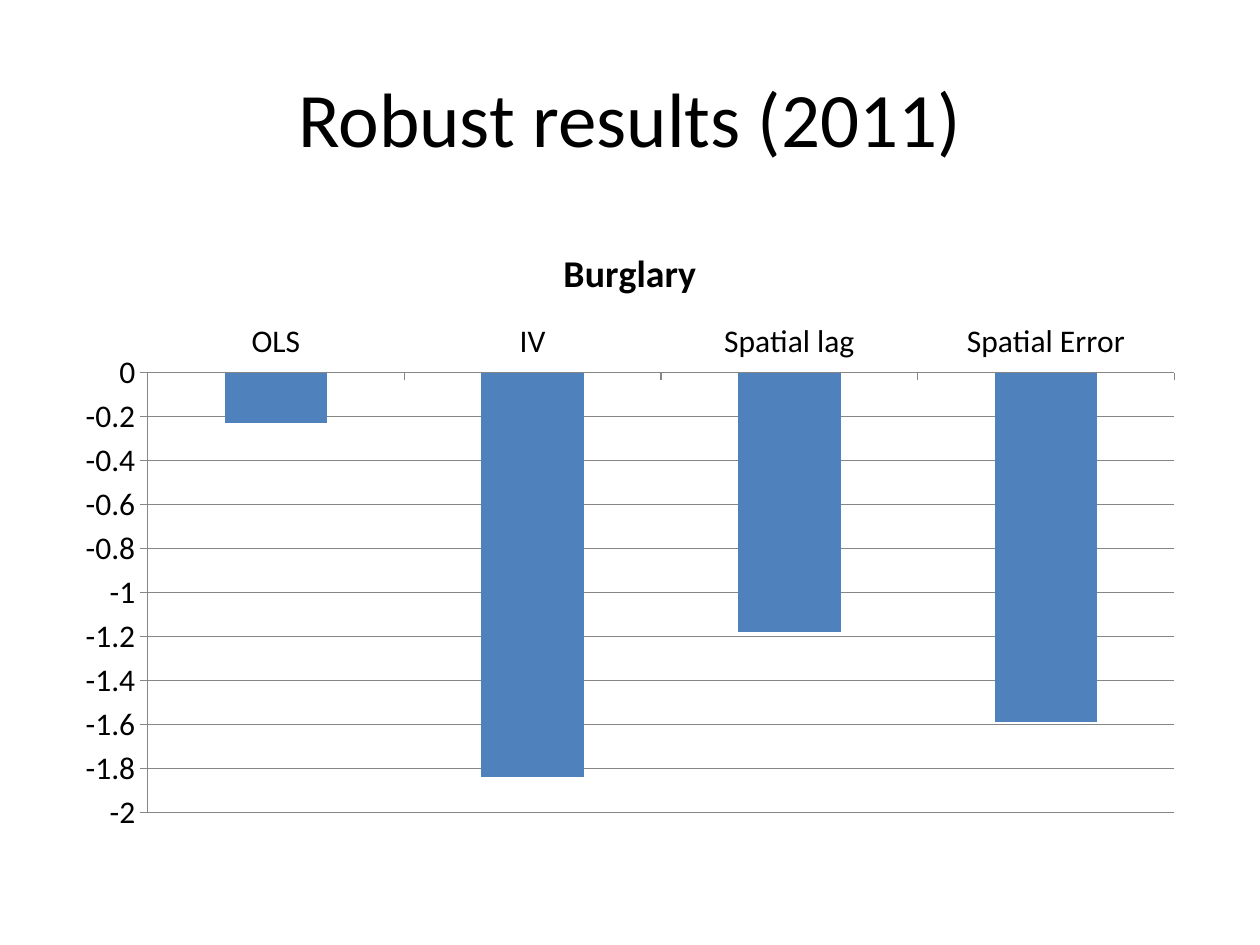
from dataclasses import dataclass

from pptx import Presentation
from pptx.chart.data import CategoryChartData
from pptx.dml.color import RGBColor
from pptx.enum.chart import XL_CHART_TYPE, XL_TICK_LABEL_POSITION, XL_TICK_MARK
from pptx.enum.text import MSO_ANCHOR, PP_ALIGN
from pptx.util import Inches, Pt


@dataclass(frozen=True)
class Theme:
    """Colours, font and type sizes of the slide."""
    font: str = "Calibri"
    text: RGBColor = RGBColor(0x00, 0x00, 0x00)
    bar: RGBColor = RGBColor(0x4F, 0x81, 0xBD)
    rule: RGBColor = RGBColor(0x86, 0x86, 0x86)
    heading_size: float = 44
    chart_title_size: float = 21.6
    label_size: float = 18
    rule_width: float = 0.75


THEME = Theme()
ESTIMATES = {"OLS": -0.23, "IV": -1.84, "Spatial lag": -1.18, "Spatial Error": -1.59}


def style_font(font, size, bold=False):
    """Apply the theme's typeface and colour at a given size."""
    font.name = THEME.font
    font.size = Pt(size)
    font.bold = bold
    font.color.rgb = THEME.text


def write_text(frame, text, *, size, bold=False, align=PP_ALIGN.CENTER):
    """Fill a text frame with one formatted paragraph."""
    paragraph = frame.paragraphs[0]
    paragraph.alignment = align
    run = paragraph.add_run()
    run.text = text
    style_font(run.font, size, bold)


def style_rule(line):
    """Draw an axis or gridline as a thin grey rule."""
    line.color.rgb = THEME.rule
    line.width = Pt(THEME.rule_width)


def place_heading(slide, text):
    """Position the title placeholder and write the heading."""
    heading = slide.shapes.title
    heading.left, heading.top = Inches(0.5), Inches(0.3)
    heading.width, heading.height = Inches(9), Inches(1.25)
    heading.text_frame.vertical_anchor = MSO_ANCHOR.MIDDLE
    write_text(heading.text_frame, text, size=THEME.heading_size)


def style_axes(chart):
    """Set the scale, ticks, labels and rules of both axes."""
    methods, effects = chart.category_axis, chart.value_axis
    for axis in (methods, effects):
        axis.major_tick_mark = XL_TICK_MARK.OUTSIDE
        axis.minor_tick_mark = XL_TICK_MARK.NONE
        style_font(axis.tick_labels.font, THEME.label_size)
        style_rule(axis.format.line)
    methods.tick_label_position = XL_TICK_LABEL_POSITION.HIGH
    effects.minimum_scale, effects.maximum_scale = -2, 0
    effects.major_unit = 0.2
    effects.has_major_gridlines = True
    style_rule(effects.major_gridlines.format.line)


def add_column_chart(slide, name, values):
    """Add a titled column chart with one series."""
    data = CategoryChartData()
    data.categories = list(values)
    data.add_series(name, list(values.values()))
    chart = slide.shapes.add_chart(
        XL_CHART_TYPE.COLUMN_CLUSTERED,
        Inches(0.5), Inches(1.75), Inches(9), Inches(4.95), data,
    ).chart
    style_font(chart.font, THEME.label_size)
    chart.has_legend = False
    chart.has_title = True
    chart.chart_title.include_in_layout = False
    write_text(chart.chart_title.text_frame, name,
               size=THEME.chart_title_size, bold=True)
    style_axes(chart)
    plot = chart.plots[0]
    plot.gap_width = 150
    plot.vary_by_categories = False
    columns = plot.series[0]
    columns.invert_if_negative = False
    columns.format.fill.solid()
    columns.format.fill.fore_color.rgb = THEME.bar


def main():
    """Build and save the results slide."""
    deck = Presentation()
    deck.slide_width, deck.slide_height = Inches(10), Inches(7.5)
    slide = deck.slides.add_slide(deck.slide_layouts.get_by_name("Title Only"))
    place_heading(slide, "Robust results (2011)")
    add_column_chart(slide, "Burglary", ESTIMATES)
    deck.save("out.pptx")


if __name__ == "__main__":
    main()
